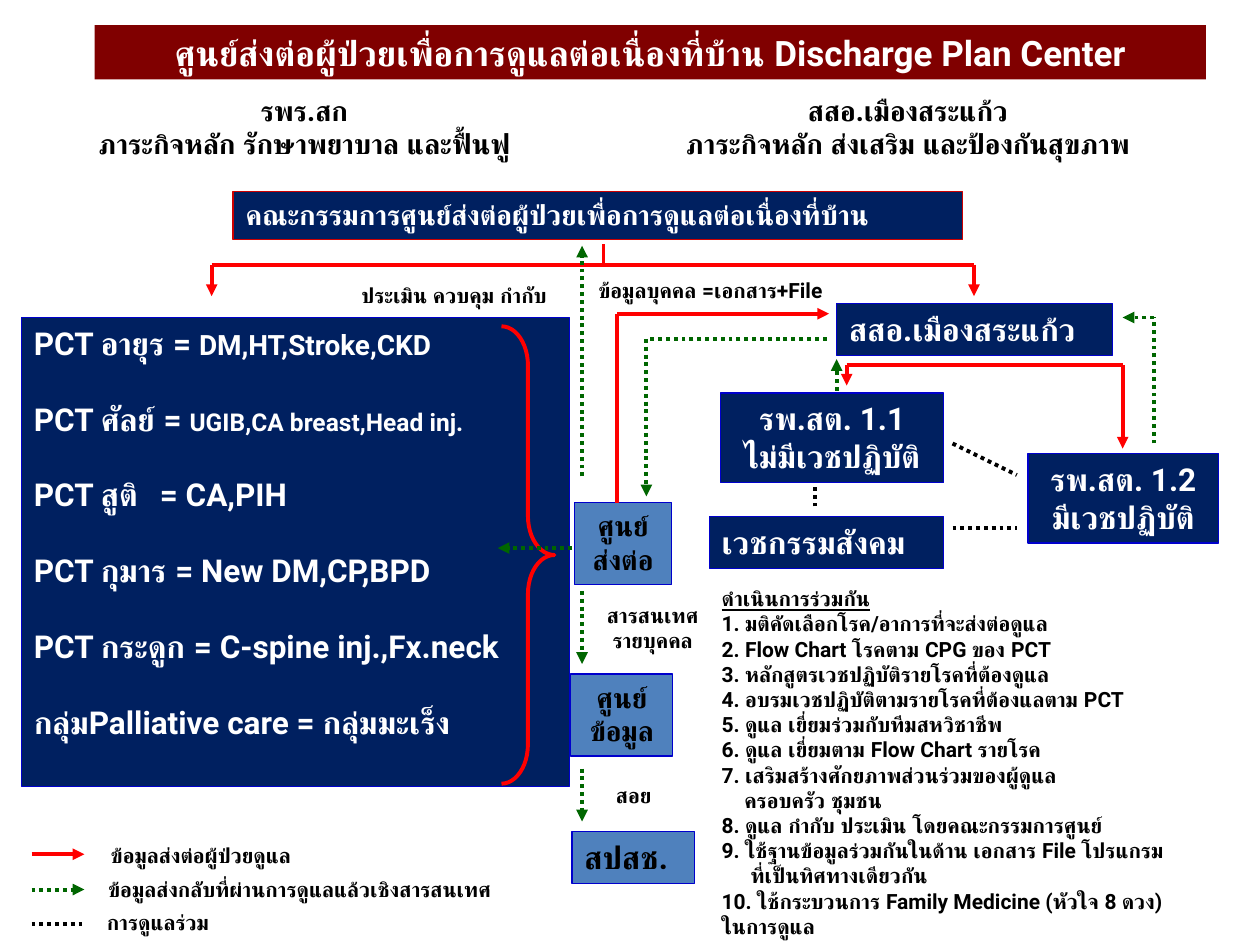
from pptx import Presentation
from pptx.dml.color import RGBColor
from pptx.enum.dml import MSO_LINE
from pptx.enum.shapes import MSO_CONNECTOR, MSO_SHAPE
from pptx.enum.text import MSO_ANCHOR, MSO_AUTO_SIZE, PP_ALIGN
from pptx.oxml.ns import qn
from pptx.util import Inches, Pt
from lxml.etree import SubElement

WHITE, BLACK, RED, GREEN = "FFFFFF", "000000", "FF0000", "006600"
MAROON, NAVY, SKY, EDGE = "800000", "002060", "4F81BD", "0000CC"

# Format values; anything not given falls back to BASE
BASE = dict(fill=None, line=None, color=BLACK, size=12, font="Roboto",
            align="left", wrap=False, gap=0)
FORMATS = {
    "title": dict(fill=MAROON, color=WHITE, size=20, align="center", wrap=True),
    "heading": dict(size=16, align="center"),
    "committee": dict(fill=NAVY, line="CC0000", color=WHITE, size=16, font="Arial"),
    "teams": dict(fill=NAVY, line=EDGE, color=WHITE, size=18, gap=21.7),
    "unit": dict(fill=NAVY, line=EDGE, color=WHITE, size=18),
    "unit centred": dict(fill=NAVY, line=EDGE, color=WHITE, size=18, align="center"),
    "centre": dict(fill=SKY, line=EDGE, size=16, align="center"),
    "office": dict(fill=SKY, line=EDGE, size=18),
    "label": dict(),
    "label centred": dict(align="center"),
}

# A paragraph is a string or a list of (text, overrides) spans
TEAMS = [
    ["PCT อายุร = ", ("DM,HT,Stroke,CKD", {"size": 16})],
    ["PCT ศัลย์ = ", ("UGIB,CA breast,Head inj.", {"size": 14})],
    "PCT สูติ \t= CA,PIH",
    "PCT กุมาร = New DM,CP,BPD",
    "PCT กระดูก = C-spine inj.,Fx.neck",
    "กลุ่มPalliative care = กลุ่มมะเร็ง",
]
JOINT_WORK = [
    [("ดำเนินการร่วมกัน", {"underline": True})],
    "1. มติคัดเลือกโรค/อาการที่จะส่งต่อดูแล",
    "2. Flow Chart โรคตาม CPG ของ PCT",
    "3. หลักสูตรเวชปฏิบัติรายโรคที่ต้องดูแล",
    "4. อบรมเวชปฏิบัติตามรายโรคที่ต้องแลตาม PCT",
    "5. ดูแล เยี่ยมร่วมกับทีมสหวิชาชีพ",
    "6. ดูแล เยี่ยมตาม Flow Chart รายโรค",
    "7. เสริมสร้างศักยภาพส่วนร่วมของผู้ดูแล",
    [("ครอบครัว ชุมชน", {"indent": 0.18})],
    "8. ดูแล กำกับ ประเมิน โดยคณะกรรมการศูนย์",
    "9. ใช้ฐานข้อมูลร่วมกันในด้าน เอกสาร File โปรแกรม",
    [("ที่เป็นทิศทางเดียวกัน", {"indent": 0.23})],
    "10. ใช้กระบวนการ Family Medicine (หัวใจ 8 ดวง)",
    "ในการดูแล",
]

# format, (left, top, width, height), paragraphs
BOXES = [
    ("title", (0.75, 0.2, 8.82, 0.43),
     ["ศูนย์ส่งต่อผู้ป่วยเพื่อการดูแลต่อเนื่องที่บ้าน Discharge Plan Center"]),
    ("heading", (0.48, 0.69, 3.87, 0.64), ["รพร.สก", "ภาระกิจหลัก รักษาพยาบาล และฟื้นฟู"]),
    ("heading", (5.12, 0.69, 4.17, 0.64),
     ["สสอ.เมืองสระแก้ว", "ภาระกิจหลัก ส่งเสริม และป้องกันสุขภาพ"]),
    ("committee", (1.85, 1.52, 5.79, 0.38),
     ["คณะกรรมการศูนย์ส่งต่อผู้ป่วยเพื่อการดูแลต่อเนื่องที่บ้าน"]),
    ("teams", (0.17, 2.52, 4.35, 3.72), TEAMS),
    ("centre", (4.56, 3.99, 0.77, 0.65), ["ศูนย์", "ส่งต่อ"]),
    ("centre", (4.53, 5.35, 0.81, 0.65), ["ศูนย์", "ข้อมูล"]),
    ("office", (4.54, 6.6, 0.97, 0.41), ["สปสช."]),
    ("unit", (6.64, 2.41, 2.19, 0.41), ["สสอ.เมืองสระแก้ว"]),
    ("unit centred", (5.72, 3.12, 1.77, 0.71), ["รพ.สต. 1.1", "ไม่มีเวชปฏิบัติ"]),
    ("unit centred", (8.16, 3.6, 1.51, 0.71), ["รพ.สต. 1.2", "มีเวชปฏิบัติ"]),
    ("unit", (5.63, 4.1, 1.86, 0.41), ["เวชกรรมสังคม"]),
    ("label", (5.63, 4.6, 4.13, 2.9), JOINT_WORK),
    ("label", (2.77, 2.19, 1.83, 0.3), ["ประเมิน ควบคุม กำกับ"]),
    ("label", (4.65, 2.15, 2.27, 0.3), ["ข้อมูลบุคคล =เอกสาร+File"]),
    ("label centred", (4.68, 4.73, 1, 0.5), ["สารสนเทศ", "รายบุคคล"]),
    ("label", (4.79, 6.16, 0.53, 0.3), ["สอย"]),
    ("label", (0.78, 6.64, 1.82, 0.3), ["ข้อมูลส่งต่อผู้ป่วยดูแล"]),
    ("label", (0.76, 6.91, 3.6, 0.3), ["ข้อมูลส่งกลับที่ผ่านการดูแลแล้วเชิงสารสนเทศ"]),
    ("label", (0.75, 7.17, 1.1, 0.3), ["การดูแลร่วม"]),
]
BRACE = (3.98, 2.59, 0.42, 3.63)

# colour, dotted, arrow at the end
REFER, REPORT, SHARED = (RED, False, True), (GREEN, True, True), (BLACK, True, False)
STEM = (RED, False, False)
ROUTES = [
    (STEM, [(4.79, 1.94), (4.79, 2.1)]),
    (STEM, [(1.68, 2.1), (7.73, 2.1)]),
    (REFER, [(1.68, 2.1), (1.68, 2.35)]),
    (REFER, [(7.73, 2.1), (7.73, 2.35)]),
    (REFER, [(4.9, 3.99), (4.9, 2.49), (6.58, 2.49)]),
    (STEM, [(6.72, 2.9), (8.91, 2.9)]),
    (REFER, [(6.72, 2.9), (6.72, 3.06)]),
    (REFER, [(8.91, 2.9), (8.91, 3.56)]),
    (REPORT, [(9.16, 3.52), (9.16, 2.52), (8.91, 2.52)]),
    (REPORT, [(6.64, 3.1), (6.64, 2.85)]),
    (REPORT, [(6.56, 2.69), (5.13, 2.69), (5.13, 3.94)]),
    (REPORT, [(4.54, 4.35), (3.95, 4.35)]),
    (REPORT, [(4.62, 3.78), (4.62, 1.95)]),
    (REPORT, [(4.62, 4.69), (4.62, 5.27)]),
    (REPORT, [(4.62, 6.1), (4.62, 6.52)]),
    (SHARED, [(6.47, 4.02), (6.47, 3.85)]),
    (SHARED, [(7.56, 4.19), (8.07, 4.19)]),
    (SHARED, [(7.56, 3.52), (8.07, 3.77)]),
]
LEGEND = [(REFER, 6.78), (REPORT, 7.06), (SHARED, 7.33)]
ROUTES += [(style, [(0.25, y), (0.67, y)]) for style, y in LEGEND]


def rgb(value):
    return RGBColor.from_string(value)


def write(frame, paragraphs, look):
    for index, content in enumerate(paragraphs):
        para = frame.paragraphs[0] if index == 0 else frame.add_paragraph()
        para.alignment = PP_ALIGN.CENTER if look["align"] == "center" else PP_ALIGN.LEFT
        if look["gap"] and index:
            para.space_before = Pt(look["gap"])
        for piece in [content] if isinstance(content, str) else content:
            text, changes = (piece, {}) if isinstance(piece, str) else piece
            values = {**look, **changes}
            span = para.add_run()
            span.text = text
            settings = dict(name=values["font"], size=Pt(values["size"]), bold=True,
                            underline=values.get("underline"))
            for name, value in settings.items():
                setattr(span.font, name, value)
            span.font.color.rgb = rgb(values["color"])
            if "indent" in values:
                para._p.get_or_add_pPr().set("marL", str(Inches(values["indent"])))


def add_box(page, kind, place, paragraphs):
    look = {**BASE, **FORMATS[kind]}
    place = [Inches(v) for v in place]
    if look["fill"]:
        box = page.shapes.add_shape(MSO_SHAPE.RECTANGLE, *place)
        box.shadow.inherit = False
        box.fill.solid()
        box.fill.fore_color.rgb = rgb(look["fill"])
        if look["line"]:
            box.line.color.rgb = rgb(look["line"])
            box.line.width = Pt(0.75)
        else:
            box.line.fill.background()
    else:
        box = page.shapes.add_textbox(*place)
    settings = dict(word_wrap=look["wrap"], vertical_anchor=MSO_ANCHOR.TOP,
                    auto_size=MSO_AUTO_SIZE.SHAPE_TO_FIT_TEXT)
    for name, value in settings.items():
        setattr(box.text_frame, name, value)
    write(box.text_frame, paragraphs, look)


def add_route(page, style, points):
    """Draw straight segments through the points, with any arrow on the last one."""
    color, dotted, arrow = style
    for start, end in zip(points, points[1:]):
        link = page.shapes.add_connector(
            MSO_CONNECTOR.STRAIGHT, *[Inches(v) for v in start + end])
        link.line.color.rgb = rgb(color)
        link.line.width = Pt(2.25)
        if dotted:
            link.line.dash_style = MSO_LINE.ROUND_DOT
        if arrow and end == points[-1]:
            SubElement(link.line._get_or_add_ln(), qn("a:tailEnd"), type="triangle")
        SubElement(link._element.spPr, qn("a:effectLst"))


def add_brace(page):
    brace = page.shapes.add_shape(MSO_SHAPE.RIGHT_BRACE, *[Inches(v) for v in BRACE])
    brace.shadow.inherit = False
    brace.adjustments[0] = 0.74
    brace.fill.background()
    brace.line.color.rgb = rgb(RED)
    brace.line.width = Pt(2.25)


def main():
    deck = Presentation()
    deck.slide_width, deck.slide_height = Inches(10), Inches(7.5)
    page = deck.slides.add_slide(deck.slide_layouts[6])
    for box in BOXES:
        add_box(page, *box)
    add_brace(page)
    for route in ROUTES:
        add_route(page, *route)
    deck.save("out.pptx")


if __name__ == "__main__":
    main()
